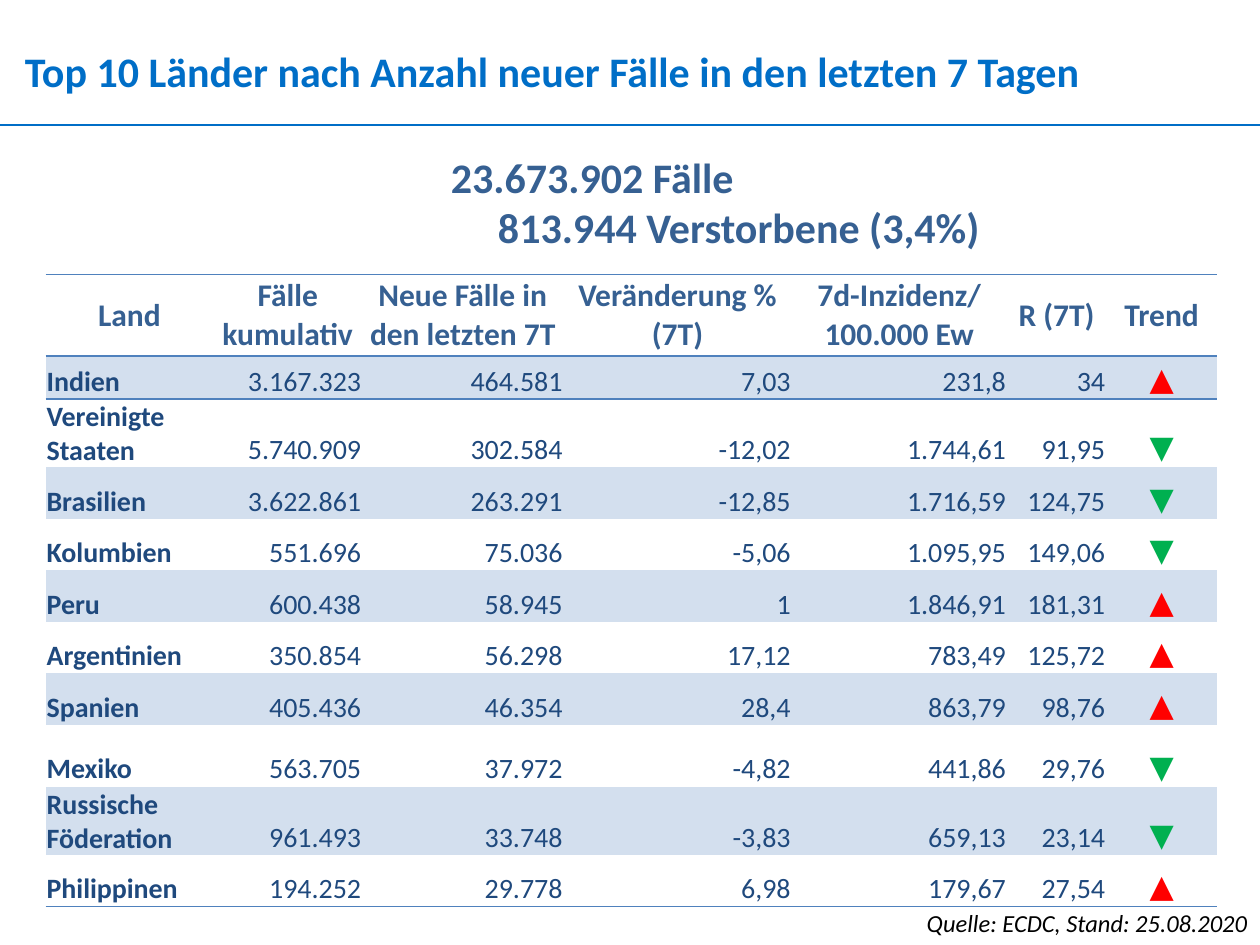
from typing import Any, NamedTuple

from lxml.etree import SubElement
from pptx import Presentation
from pptx.dml.color import RGBColor
from pptx.enum.shapes import MSO_CONNECTOR as Connector
from pptx.enum.text import MSO_ANCHOR as Anchor, MSO_AUTO_SIZE as AutoSize, PP_ALIGN as Align
from pptx.oxml.ns import qn
from pptx.util import Cm, Pt

BLUE, STEEL, NAVY = "006EC7", "366092", "1F497D"
RULE, BAND, RED, GREEN = "4F81BD", "D3DFEE", "FF0000", "00B050"
NO_STYLE = "{2D5ABB26-0587-4C30-8999-92F81FD0307C}"
UP, DOWN = "▲", "▼"


class TextStyle(NamedTuple):
    size: int
    color: str
    bold: bool = False
    italic: bool = False
    align: Align = Align.LEFT


class Country(NamedTuple):
    name: str
    cases: str
    new_cases: str
    change: str
    incidence: str
    r_value: str
    trend: str
    height: float = 1.04


HEADERS = ["Land", "Fälle kumulativ", "Neue Fälle in den letzten 7T",
           "Veränderung % (7T)", "7d-Inzidenz/ 100.000 Ew", "R (7T)", "Trend"]
COLUMN_WIDTHS = [3.38, 3, 4.06, 4.6, 4.34, 2, 2.24]
HEADER_HEIGHT = 1.65
COUNTRIES = [
    Country("Indien", "3.167.323", "464.581", "7,03", "231,8", "34", UP, 0.86),
    Country("Vereinigte Staaten", "5.740.909", "302.584", "-12,02", "1.744,61", "91,95", DOWN, 1.24),
    Country("Brasilien", "3.622.861", "263.291", "-12,85", "1.716,59", "124,75", DOWN),
    Country("Kolumbien", "551.696", "75.036", "-5,06", "1.095,95", "149,06", DOWN),
    Country("Peru", "600.438", "58.945", "1", "1.846,91", "181,31", UP),
    Country("Argentinien", "350.854", "56.298", "17,12", "783,49", "125,72", UP),
    Country("Spanien", "405.436", "46.354", "28,4", "863,79", "98,76", UP),
    Country("Mexiko", "563.705", "37.972", "-4,82", "441,86", "29,76", DOWN, 1.24),
    Country("Russische Föderation", "961.493", "33.748", "-3,83", "659,13", "23,14", DOWN),
    Country("Philippinen", "194.252", "29.778", "6,98", "179,67", "27,54", UP),
]

HEADER_STYLE = TextStyle(18, STEEL, bold=True, align=Align.CENTER)
NAME_STYLE = TextStyle(16, NAVY, bold=True)
NUMBER_STYLE = TextStyle(16, NAVY, align=Align.RIGHT)
TREND_STYLES = {UP: TextStyle(18, RED, align=Align.CENTER),
                DOWN: TextStyle(18, GREEN, align=Align.CENTER)}
HEADER_FORMAT = {"vertical_anchor": Anchor.MIDDLE, "margin_left": Cm(0.15),
                 "margin_right": Cm(0.15), "margin_top": 0, "margin_bottom": 0}
BODY_FORMAT = {"vertical_anchor": Anchor.BOTTOM, "margin_left": Cm(0.02),
               "margin_right": Cm(0.02), "margin_top": Cm(0.02), "margin_bottom": 0}


def rgb(color: str) -> RGBColor:
    return RGBColor.from_string(color)


def apply_format(target: Any, values: dict[str, Any]) -> None:
    for name, value in values.items():
        setattr(target, name, value)


def write_text(frame: Any, lines: list[str], style: TextStyle) -> None:
    for index, line in enumerate(lines):
        paragraph = frame.add_paragraph() if index else frame.paragraphs[0]
        paragraph.alignment = style.align
        run = paragraph.add_run()
        run.text = line
        apply_format(run.font, {"name": "Calibri", "size": Pt(style.size),
                                "bold": style.bold, "italic": style.italic})
        run.font.color.rgb = rgb(style.color)


def add_border(cell: Any, side: str) -> None:
    line = SubElement(cell._tc.get_or_add_tcPr(), qn(f"a:ln{side}"), w=str(Pt(1)))
    SubElement(SubElement(line, qn("a:solidFill")), qn("a:srgbClr"), val=RULE)


def fill_cell(cell: Any, text: str, style: TextStyle, values: dict[str, Any],
              borders: str, color: str | None) -> None:
    apply_format(cell, values)
    write_text(cell.text_frame, [text], style)
    for side in borders:
        add_border(cell, side)
    if color:
        cell.fill.solid()
        cell.fill.fore_color.rgb = rgb(color)
    else:
        cell.fill.background()


def add_title(slide: Any) -> None:
    title = slide.shapes.title
    apply_format(title, {"left": Cm(0.5), "top": Cm(0.92), "width": Cm(24.46), "height": Cm(1.02)})
    apply_format(title.text_frame, {"margin_left": 0, "margin_right": 0, "margin_top": 0,
                                    "margin_bottom": 0, "word_wrap": True,
                                    "vertical_anchor": Anchor.TOP,
                                    "auto_size": AutoSize.SHAPE_TO_FIT_TEXT})
    write_text(title.text_frame, ["Top 10 Länder nach Anzahl neuer Fälle in den letzten 7 Tagen"],
               TextStyle(24, BLUE, bold=True))


def add_title_rule(slide: Any) -> None:
    rule = slide.shapes.add_connector(Connector.STRAIGHT, 0, Cm(2.52), Cm(25.4), Cm(2.52))
    rule.line.color.rgb = rgb(BLUE)
    rule.line.width = Pt(1.5)
    SubElement(rule._element.spPr, qn("a:effectLst"))


def add_text_box(slide: Any, left: float, top: float, width: float, height: float,
                 lines: list[str], style: TextStyle, wrap: bool = True) -> Any:
    box = slide.shapes.add_textbox(Cm(left), Cm(top), Cm(width), Cm(height))
    apply_format(box.text_frame, {"word_wrap": wrap, "auto_size": AutoSize.SHAPE_TO_FIT_TEXT})
    write_text(box.text_frame, lines, style)
    return box


def add_country_table(slide: Any) -> None:
    heights = [HEADER_HEIGHT] + [country.height for country in COUNTRIES]
    frame = slide.shapes.add_table(len(heights), len(HEADERS), Cm(0.92), Cm(5.53),
                                   Cm(sum(COLUMN_WIDTHS)), Cm(sum(heights)))
    table = frame.table
    apply_format(table, {"first_row": False, "horz_banding": False})
    table._tbl.tblPr.find(qn("a:tableStyleId")).text = NO_STYLE
    for column, width in zip(table.columns, COLUMN_WIDTHS):
        column.width = Cm(width)
    for row, height in zip(table.rows, heights):
        row.height = Cm(height)
    for column, header in enumerate(HEADERS):
        fill_cell(table.cell(0, column), header, HEADER_STYLE, HEADER_FORMAT, "TB", None)
    for row, country in enumerate(COUNTRIES, start=1):
        borders = {1: "T", len(COUNTRIES): "B"}.get(row, "")
        color = BAND if row % 2 else None
        styles = [NAME_STYLE] + [NUMBER_STYLE] * 5 + [TREND_STYLES[country.trend]]
        for column, style in enumerate(styles):
            fill_cell(table.cell(row, column), country[column], style, BODY_FORMAT, borders, color)


def main() -> None:
    presentation = Presentation()
    apply_format(presentation, {"slide_width": Cm(25.4), "slide_height": Cm(19.05)})
    slide = presentation.slides.add_slide(presentation.slide_layouts[5])
    add_title(slide)
    add_title_rule(slide)
    totals = add_text_box(slide, 8.84, 2.92, 11.28, 2.31,
                          ["23.673.902 Fälle", "813.944 Verstorbene (3,4%)"],
                          TextStyle(24, STEEL, bold=True), wrap=False)
    totals.text_frame.paragraphs[1]._p.get_or_add_pPr().set("marL", str(Cm(0.95)))
    add_text_box(slide, 16.41, 18.19, 8.99, 0.86, ["Quelle: ECDC, Stand: 25.08.2020"],
                 TextStyle(14, "000000", italic=True, align=Align.RIGHT))
    add_country_table(slide)
    presentation.save("out.pptx")


if __name__ == "__main__":
    main()
